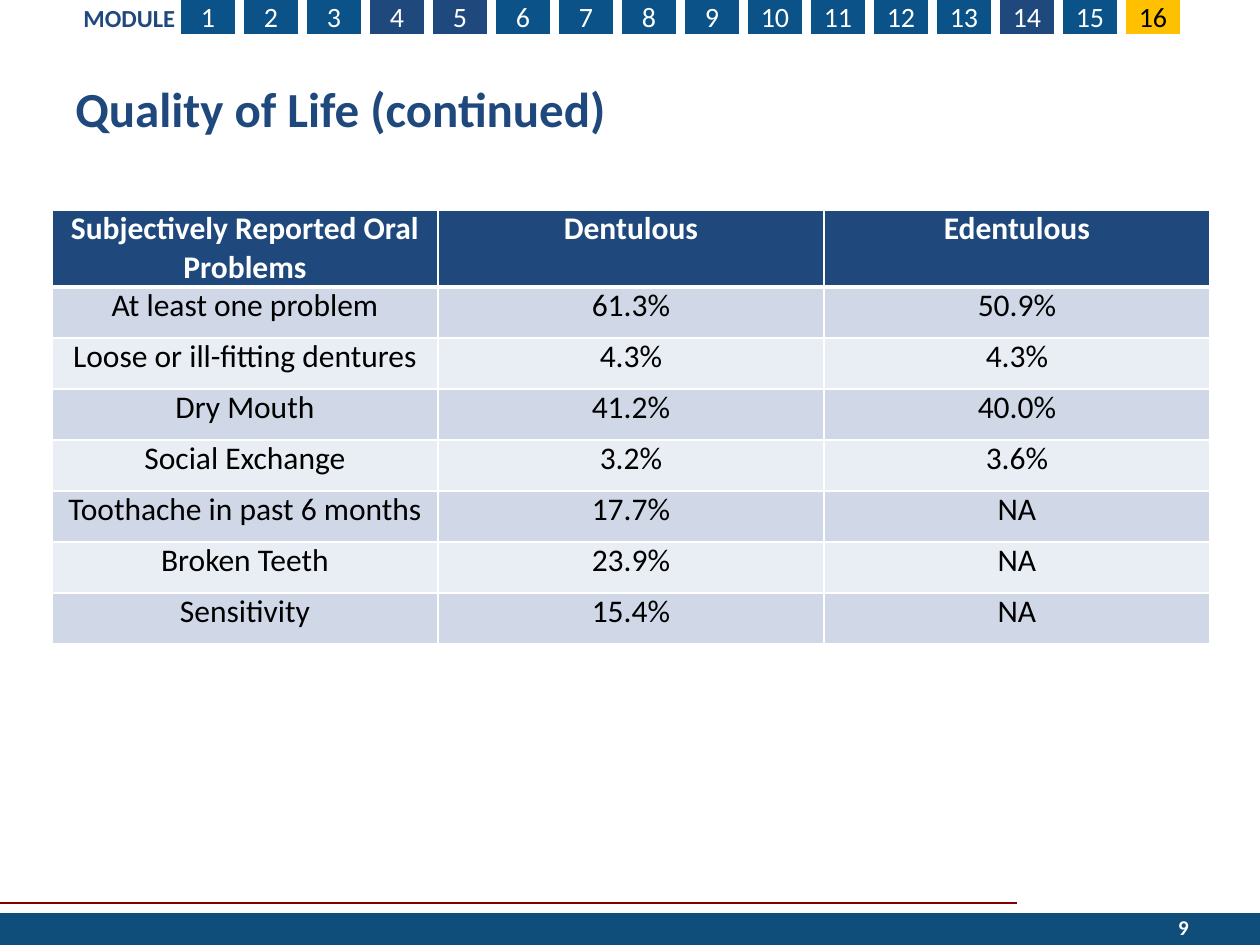
from lxml.etree import SubElement
from pptx import Presentation
from pptx.dml.color import RGBColor
from pptx.enum.shapes import MSO_CONNECTOR, MSO_SHAPE
from pptx.enum.text import MSO_ANCHOR, PP_ALIGN
from pptx.oxml.ns import qn
from pptx.util import Pt

EMU_PER_PX = 914400 / 126

THEME = {
    "navy": RGBColor.from_string("1F497D"),
    "blue": RGBColor.from_string("0A5287"),
    "footer": RGBColor.from_string("0F4D7B"),
    "rule": RGBColor.from_string("800000"),
    "current": RGBColor.from_string("FFC000"),
    "band_dark": RGBColor.from_string("D0D8E8"),
    "band_light": RGBColor.from_string("E9EDF4"),
    "white": RGBColor.from_string("FFFFFF"),
    "black": RGBColor.from_string("000000"),
    "title": {"name": "Calibri", "size": Pt(28), "bold": True},
    "body": {"name": "Calibri", "size": Pt(18), "bold": False},
    "header": {"name": "Calibri", "size": Pt(18), "bold": True},
    "tab": {"name": "Calibri", "size": Pt(16), "bold": False},
    "label": {"name": "Calibri", "size": Pt(14), "bold": True},
    "page": {"name": "Calibri", "size": Pt(12), "bold": True},
}


def px(*lengths):
    """Turn pixel lengths into a list of EMU."""
    return [round(length * EMU_PER_PX) for length in lengths]


def write(frame, text, style, color, align=PP_ALIGN.LEFT):
    """Put one styled paragraph into a text frame."""
    paragraph = frame.paragraphs[0]
    paragraph.text = text
    paragraph.alignment = align
    font = paragraph.runs[0].font
    for attribute, value in THEME[style].items():
        setattr(font, attribute, value)
    font.color.rgb = THEME[color]


deck = Presentation()
deck.slide_width, deck.slide_height = px(1260, 945)
slide = deck.slides.add_slide(deck.slide_layouts[6])
shapes = slide.shapes

# Footer rule and bar
rule = shapes.add_connector(MSO_CONNECTOR.STRAIGHT, *px(-1, 903, 1017, 903))
rule.line.color.rgb = THEME["rule"]
rule.line.width = Pt(1.5)
SubElement(rule._element.spPr, qn("a:effectLst"))

# Filled rectangles: the footer bar, then one tab per module
footer = shapes.add_shape(MSO_SHAPE.RECTANGLE, *px(0, 913, 1260, 32))
bars = [(footer, "footer")]
tab_fills = {4: "navy", 5: "navy", 14: "navy", 16: "current"}
for module in range(1, 17):
    tab = shapes.add_shape(
        MSO_SHAPE.RECTANGLE, *px(181 + 63 * (module - 1), -1, 54, 35))
    fill = tab_fills.get(module, "blue")
    tab.text_frame.vertical_anchor = MSO_ANCHOR.MIDDLE
    tab.text_frame.word_wrap = False
    write(tab.text_frame, str(module), "tab",
          "black" if fill == "current" else "white", PP_ALIGN.CENTER)
    bars.append((tab, fill))
for bar, fill in bars:
    bar.shadow.inherit = False
    bar.fill.solid()
    bar.fill.fore_color.rgb = THEME[fill]
    bar.line.fill.background()

# Module label, page number and title
captions = [
    ((71, -3, 127, 43), "MODULE", "label", "navy",
     PP_ALIGN.LEFT, MSO_ANCHOR.TOP),
    ((907, 902, 294, 50), "9", "page", "white",
     PP_ALIGN.RIGHT, MSO_ANCHOR.MIDDLE),
    ((63, 78, 1134, 59), "Quality of Life (continued)", "title", "navy",
     PP_ALIGN.LEFT, MSO_ANCHOR.MIDDLE),
]
for box, text, style, color, align, anchor in captions:
    caption = shapes.add_textbox(*px(*box)).text_frame
    caption.word_wrap = True
    caption.vertical_anchor = anchor
    write(caption, text, style, color, align)

# Oral problems table
problems = [
    ("Subjectively Reported Oral Problems", "Dentulous", "Edentulous"),
    ("At least one problem", "61.3%", "50.9%"),
    ("Loose or ill-fitting dentures", "4.3%", "4.3%"),
    ("Dry Mouth", "41.2%", "40.0%"),
    ("Social Exchange", "3.2%", "3.6%"),
    ("Toothache in past 6 months", "17.7%", "NA"),
    ("Broken Teeth", "23.9%", "NA"),
    ("Sensitivity", "15.4%", "NA"),
]
side, = px(9)
cell_format = {"margin_left": side, "margin_right": side,
               "margin_top": 0, "margin_bottom": 0}
table = shapes.add_table(
    len(problems), 3, *px(52, 210, 1158, 434)).table
for column in table.columns:
    column.width, = px(386)
for row_index, values in enumerate(problems):
    is_header = row_index == 0
    table.rows[row_index].height, = px(77 if is_header else 51)
    if is_header:
        style, color, fill = "header", "white", "navy"
    else:
        style, color = "body", "black"
        fill = "band_dark" if row_index % 2 else "band_light"
    border_widths = {"L": 1, "R": 1, "T": 3 if row_index == 1 else 1,
                     "B": 3 if is_header else 1}
    for column_index, value in enumerate(values):
        cell = table.cell(row_index, column_index)
        for attribute, setting in cell_format.items():
            setattr(cell, attribute, setting)
        properties = cell._tc.get_or_add_tcPr()
        for edge, width in border_widths.items():
            border = SubElement(properties, qn(f"a:ln{edge}"), w=str(Pt(width)))
            border_fill = SubElement(border, qn("a:solidFill"))
            SubElement(border_fill, qn("a:srgbClr"), val=str(THEME["white"]))
        cell.fill.solid()
        cell.fill.fore_color.rgb = THEME[fill]
        write(cell.text_frame, value, style, color, PP_ALIGN.CENTER)

deck.save("out.pptx")
